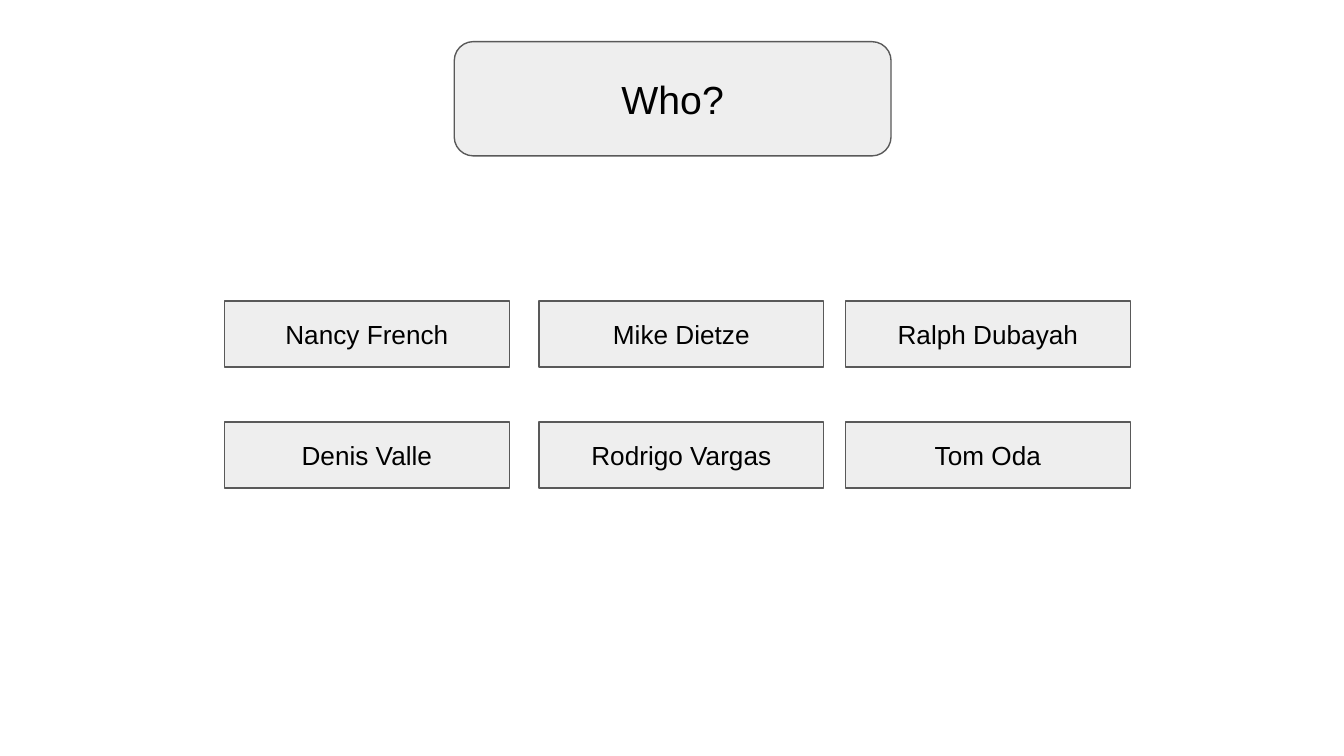
import pptx
import pptx.dml.color
import pptx.enum.shapes
import pptx.enum.text
import pptx.util

COLORS = {"fill": "EEEEEE", "line": "595959", "text": "000000"}
SHAPES = pptx.enum.shapes.MSO_SHAPE

presentation = pptx.Presentation()
presentation.slide_width = pptx.util.Inches(10)
presentation.slide_height = presentation.slide_width * 9 // 16
slide = presentation.slides.add_slide(presentation.slide_layouts[6])


def color(name):
    return pptx.dml.color.RGBColor.from_string(COLORS[name])


def add_box(kind, text, size, *bounds):
    """Add a grey box with centred text; bounds are left, top, width, height in inches."""
    shape = slide.shapes.add_shape(kind, *map(pptx.util.Inches, bounds))
    shape.shadow.inherit = False
    shape.fill.solid()
    shape.fill.fore_color.rgb = color("fill")
    shape.line.color.rgb = color("line")
    shape.line.width = pptx.util.Pt(0.75)
    frame = shape.text_frame
    frame_format = {
        "word_wrap": True,
        "vertical_anchor": pptx.enum.text.MSO_ANCHOR.MIDDLE,
    }
    for side in ("left", "top", "right", "bottom"):
        frame_format[f"margin_{side}"] = pptx.util.Inches(0.1)
    for name, value in frame_format.items():
        setattr(frame, name, value)
    paragraph = frame.paragraphs[0]
    paragraph.alignment = pptx.enum.text.PP_ALIGN.CENTER
    run = paragraph.add_run()
    run.text = text
    for name, value in {"name": "Arial", "size": pptx.util.Pt(size)}.items():
        setattr(run.font, name, value)
    run.font.color.rgb = color("text")


add_box(SHAPES.ROUNDED_RECTANGLE, "Who?", 21, 3.38, 0.31, 3.25, 0.85)

# Each column of people: its left edge, then the names from top to bottom
people_columns = [
    (1.67, ["Nancy French", "Denis Valle"]),
    (4.01, ["Mike Dietze", "Rodrigo Vargas"]),
    (6.29, ["Ralph Dubayah", "Tom Oda"]),
]
first_row, row_step = 2.24, 0.9
for left, people in people_columns:
    for row, person in enumerate(people):
        add_box(SHAPES.RECTANGLE, person, 14, left, first_row + row * row_step, 2.12, 0.49)

presentation.save("out.pptx")
